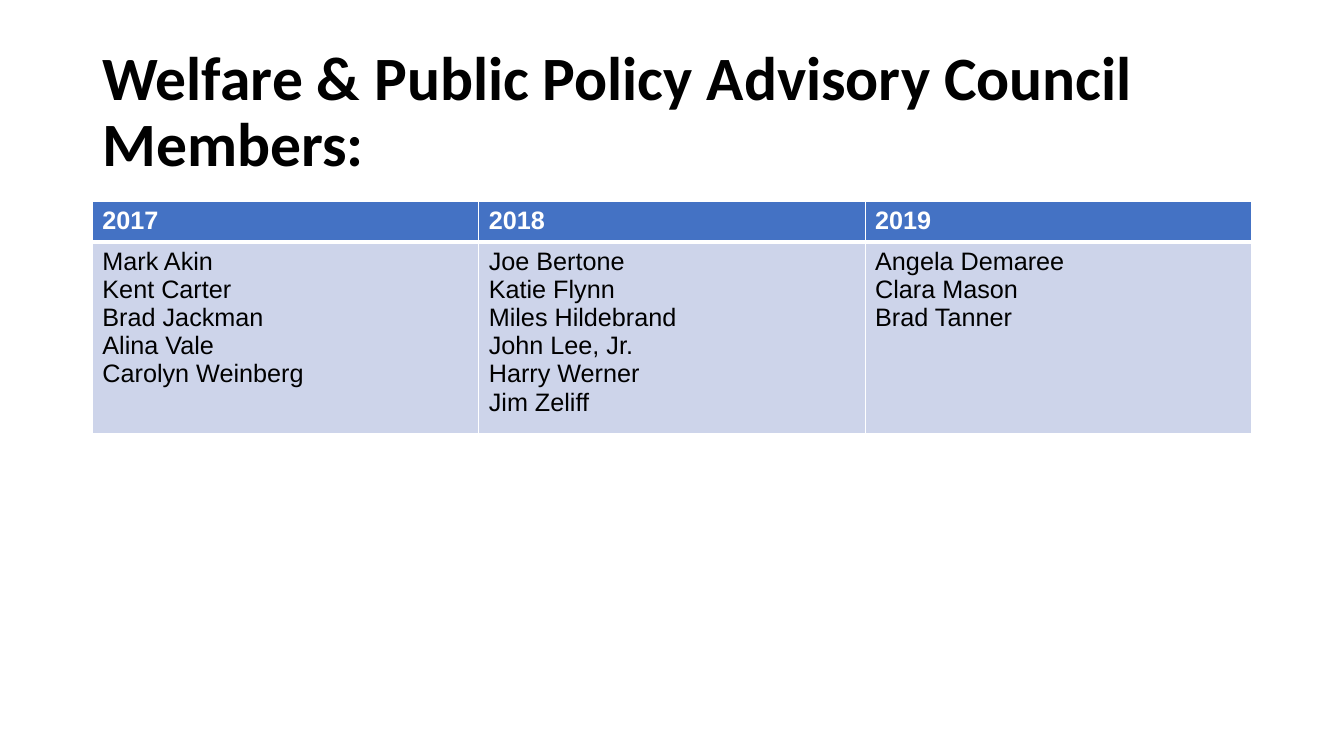
from lxml.etree import SubElement
from pptx import Presentation
from pptx.dml.color import RGBColor
from pptx.enum.text import MSO_ANCHOR
from pptx.oxml.ns import qn
from pptx.util import Pt

TITLE = "Welfare & Public Policy Advisory Council\vMembers:"
MEMBERS = {
    "2017": ["Mark Akin", "Kent Carter", "Brad Jackman", "Alina Vale", "Carolyn Weinberg"],
    "2018": ["Joe Bertone", "Katie Flynn", "Miles Hildebrand", "John Lee, Jr.",
             "Harry Werner", "Jim Zeliff"],
    "2019": ["Angela Demaree", "Clara Mason", "Brad Tanner"],
}
ROW_HEIGHT = 29.2


def color(value):
    return RGBColor.from_string(value)


def format_runs(paragraph, name, size, value, bold):
    for run in paragraph.runs:
        run.font.name = name
        run.font.size = Pt(size)
        run.font.bold = bold
        run.font.color.rgb = color(value)


def add_border(cell, side, width, value):
    line = SubElement(cell._tc.get_or_add_tcPr(), qn(f"a:ln{side}"), w=str(Pt(width)))
    fill = SubElement(line, qn("a:solidFill"))
    SubElement(fill, qn("a:srgbClr"), val=value)


def fill_cell(cell, text, fill, text_color, bold, bottom_width):
    cell.text_frame.text = text
    format_runs(cell.text_frame.paragraphs[0], "Arial", 18, text_color, bold)
    for side, width in (("L", 1), ("R", 1), ("T", 1), ("B", bottom_width)):
        add_border(cell, side, width, "FFFFFF")
    cell.fill.solid()
    cell.fill.fore_color.rgb = color(fill)


def add_title(slide, left, top, width, height):
    text_frame = slide.shapes.add_textbox(Pt(left), Pt(top), Pt(width), Pt(height)).text_frame
    text_frame.word_wrap = True
    text_frame.vertical_anchor = MSO_ANCHOR.MIDDLE
    text_frame.text = TITLE
    paragraph = text_frame.paragraphs[0]
    paragraph.line_spacing = 0.9
    format_runs(paragraph, "Calibri", 44, "000000", True)


def add_members_table(slide, left, top, width):
    table = slide.shapes.add_table(
        2, len(MEMBERS), Pt(left), Pt(top), Pt(width), Pt(2 * ROW_HEIGHT)).table
    for row in table.rows:
        row.height = Pt(ROW_HEIGHT)
    for index, (year, names) in enumerate(MEMBERS.items()):
        table.columns[index].width = Pt(width / len(MEMBERS))
        fill_cell(table.cell(0, index), year, "4472C4", "FFFFFF", True, 3)
        fill_cell(table.cell(1, index), "\v".join(names), "CDD4EA", "000000", False, 1)
        add_top = table.cell(1, index)._tc.tcPr.find(qn("a:lnT"))
        add_top.set("w", str(Pt(3)))


def main():
    presentation = Presentation()
    presentation.slide_width = Pt(960)
    presentation.slide_height = Pt(540)
    slide = presentation.slides.add_slide(presentation.slide_layouts[6])
    add_title(slide, 66, 28.75, 828, 104.4)
    add_members_table(slide, 66, 143.75, 828)
    presentation.save("out.pptx")


if __name__ == "__main__":
    main()
